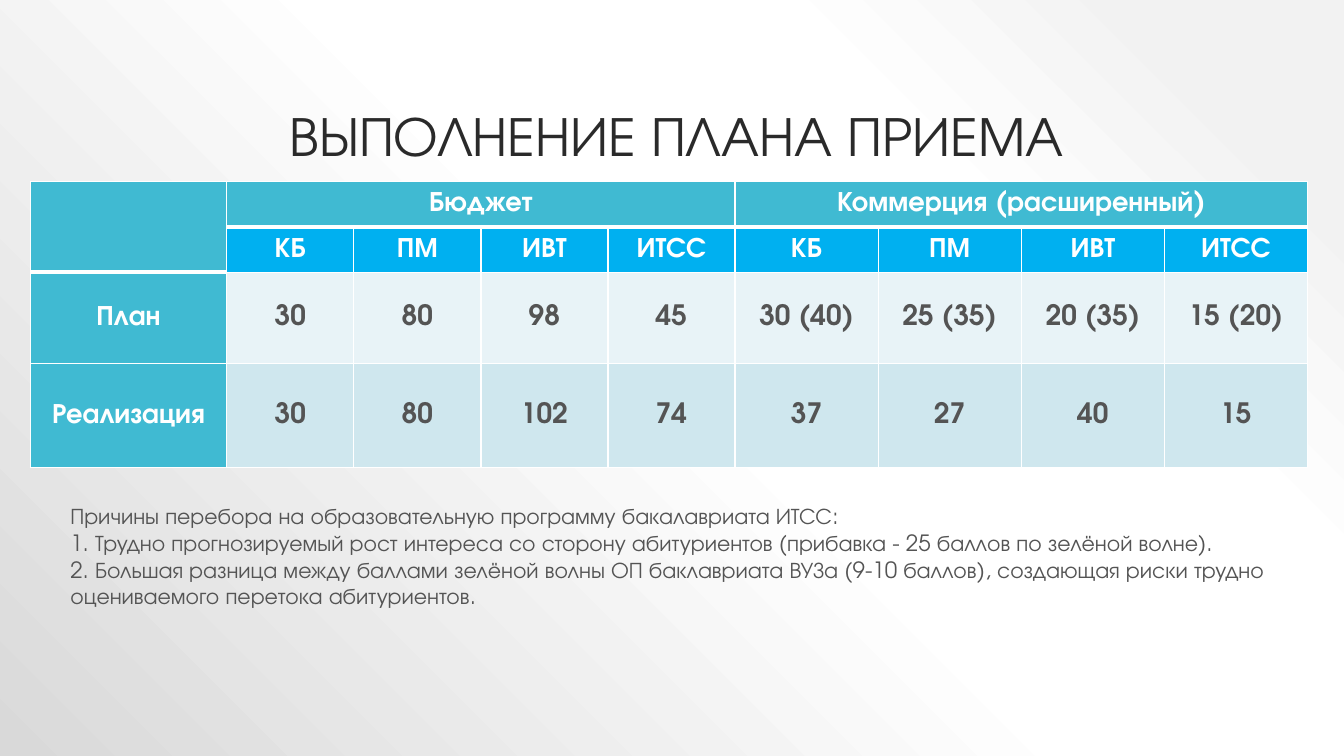
from pptx import Presentation
from pptx.dml.color import RGBColor
from pptx.enum.text import MSO_ANCHOR, PP_ALIGN
from pptx.oxml import parse_xml
from pptx.oxml.ns import nsdecls
from pptx.util import Inches, Pt

FONT = "TeX Gyre Adventor"
WHITE, GREY, DARK = "FFFFFF", "545454", "2A2A2A"
TEAL, BLUE = "40BAD2", "00B0F0"
BAND_FILLS = ["E8F3F7", "CFE7EE"]
BACKGROUND_STOPS = [(10, "F2F2F2"), (28, "FFFFFF"), (48, "FFFFFF"), (100, "D9D9D9")]

# Table content and grid, in inches
GROUPS = ["Бюджет", "Коммерция (расширенный)"]
PROGRAMMES = ["КБ", "ПМ", "ИВТ", "ИТСС"]
RESULTS = [
    ["План", "30", "80", "98", "45", "30 (40)", "25 (35)", "20 (35)", "15 (20)"],
    ["Реализация", "30", "80", "102", "74", "37", "27", "40", "15"],
]
COLUMN_WIDTHS = [1.95] + [1.26] * 4 + [1.42] * 4
ROW_HEIGHTS = [0.45, 0.45, 0.91, 1.03]

TITLE = "ВЫПОЛНЕНИЕ ПЛАНА ПРИЕМА"
REASONS = [
    "Причины перебора на образовательную программу бакалавриата ИТСС:",
    "1. Трудно прогнозируемый рост интереса со сторону абитуриентов "
    "(прибавка - 25 баллов по зелёной волне).",
    "2. Большая разница между баллами зелёной волны ОП баклавриата ВУЗа "
    "(9-10 баллов), создающая риски трудно оцениваемого перетока абитуриентов.",
]


def color(value):
    return RGBColor.from_string(value)


def format_text(text_frame, size, text_color, bold=False, align=PP_ALIGN.LEFT):
    for paragraph in text_frame.paragraphs:
        paragraph.alignment = align
        for run in paragraph.runs:
            run.font.name = FONT
            run.font.size = Pt(size)
            run.font.bold = bold
            run.font.color.rgb = color(text_color)


def set_background(slide):
    stops = "".join(
        f'<a:gs pos="{position * 1000}"><a:srgbClr val="{value}"/></a:gs>'
        for position, value in BACKGROUND_STOPS
    )
    background = parse_xml(
        f'<p:bg {nsdecls("p", "a")}><p:bgPr><a:gradFill rotWithShape="1">'
        f'<a:gsLst>{stops}</a:gsLst><a:path path="circle">'
        '<a:fillToRect l="100000" b="100000"/></a:path></a:gradFill>'
        "<a:effectLst/></p:bgPr></p:bg>"
    )
    slide.element.cSld.insert(0, background)


def add_text(slide, box, text, size, text_color, align=PP_ALIGN.LEFT,
             anchor=MSO_ANCHOR.TOP):
    shape = slide.shapes.add_textbox(*map(Inches, box))
    text_frame = shape.text_frame
    text_frame.word_wrap = True
    text_frame.vertical_anchor = anchor
    text_frame.text = text
    format_text(text_frame, size, text_color, align=align)
    return text_frame


def set_borders(cell, top, bottom):
    properties = cell._tc.get_or_add_tcPr()
    for side, width in (("L", 1), ("R", 1), ("T", top), ("B", bottom)):
        properties.append(parse_xml(
            f'<a:ln{side} {nsdecls("a")} w="{Pt(width)}"><a:solidFill>'
            f'<a:srgbClr val="{WHITE}"/></a:solidFill></a:ln{side}>'
        ))


def style_cell(cell, text, fill, text_color, top=1, bottom=1):
    set_borders(cell, top, bottom)
    cell.fill.solid()
    cell.fill.fore_color.rgb = color(fill)
    cell.vertical_anchor = MSO_ANCHOR.MIDDLE
    cell.text = text
    format_text(cell.text_frame, 20, text_color, bold=True, align=PP_ALIGN.CENTER)


def add_admission_table(slide):
    size = sum(COLUMN_WIDTHS), sum(ROW_HEIGHTS)
    frame = slide.shapes.add_table(
        len(ROW_HEIGHTS), len(COLUMN_WIDTHS), *map(Inches, (0.3, 1.8, *size)))
    table = frame.table
    for column, width in zip(table.columns, COLUMN_WIDTHS):
        column.width = Inches(width)
    for row, height in zip(table.rows, ROW_HEIGHTS):
        row.height = Inches(height)

    # Two header rows: groups above their programmes
    span = len(PROGRAMMES)
    group_row = [""] + [text for group in GROUPS for text in [group] + [""] * (span - 1)]
    programme_row = [""] + PROGRAMMES * len(GROUPS)
    for column, (group, programme) in enumerate(zip(group_row, programme_row)):
        style_cell(table.cell(0, column), group, TEAL, WHITE, bottom=3)
        if column:
            style_cell(table.cell(1, column), programme, BLUE, WHITE, top=3)
        else:
            style_cell(table.cell(1, column), programme, TEAL, WHITE, bottom=3)
    table.cell(0, 0).merge(table.cell(1, 0))
    for first in range(1, len(group_row), span):
        table.cell(0, first).merge(table.cell(0, first + span - 1))

    # Result rows: a teal label, then banded values
    for row, (values, band) in enumerate(zip(RESULTS, BAND_FILLS), start=2):
        label, *numbers = values
        style_cell(table.cell(row, 0), label, TEAL, WHITE, top=3 if row == 2 else 1)
        for column, number in enumerate(numbers, start=1):
            style_cell(table.cell(row, column), number, band, GREY)


def main():
    presentation = Presentation()
    presentation.slide_width = Inches(13.33)
    presentation.slide_height = Inches(7.5)
    slide = presentation.slides.add_slide(presentation.slide_layouts[6])

    set_background(slide)
    title = add_text(slide, (1.46, 0.29, 10.5, 1.43), TITLE, 40, DARK,
                     PP_ALIGN.CENTER, MSO_ANCHOR.BOTTOM)
    title.paragraphs[0].line_spacing = 0.9
    add_admission_table(slide)
    add_text(slide, (0.6, 4.93, 12.36, 1.45), "\n".join(REASONS), 16, GREY)
    presentation.save("out.pptx")


if __name__ == "__main__":
    main()
